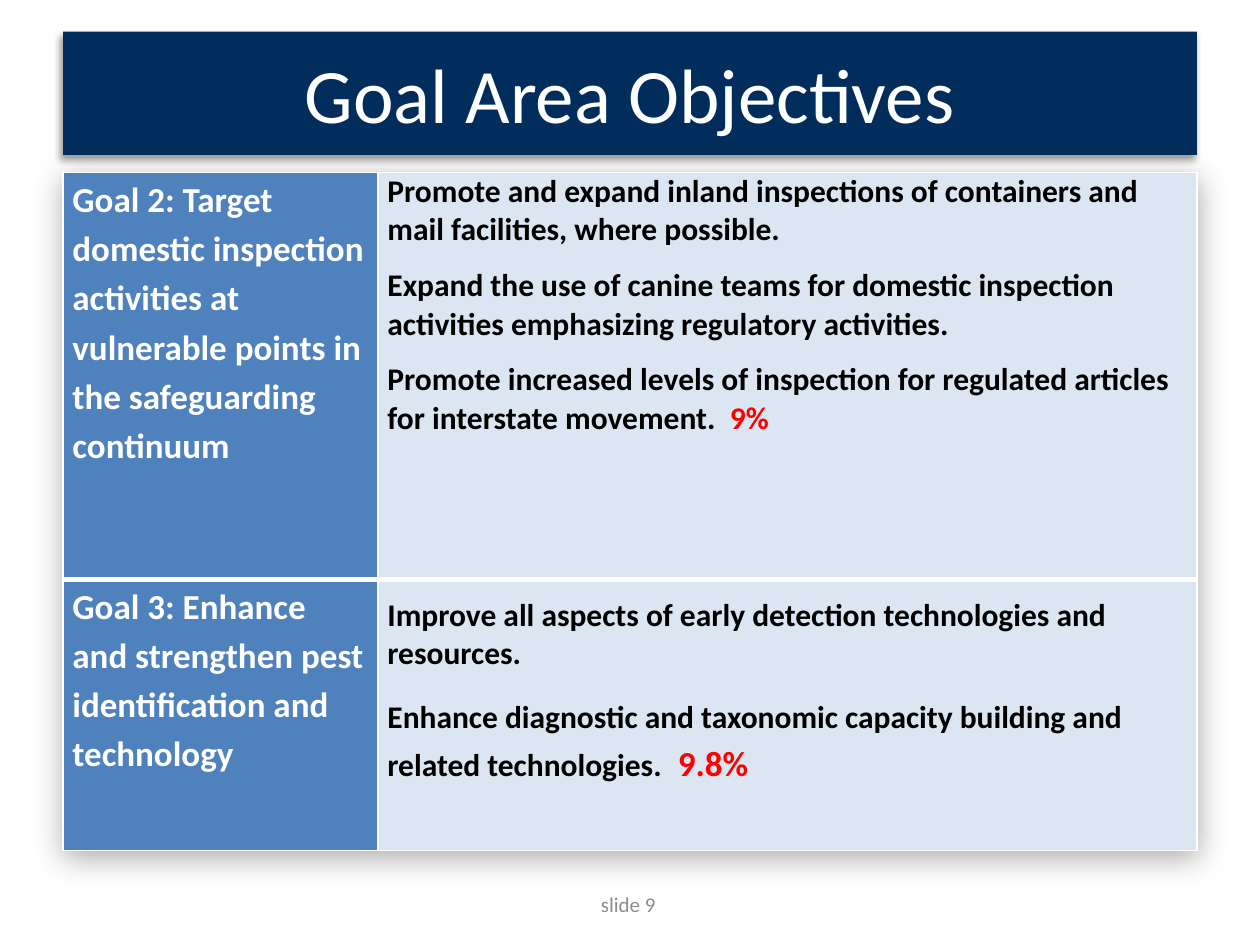
from dataclasses import dataclass

from lxml import etree
from pptx import Presentation
from pptx.dml.color import RGBColor
from pptx.enum.text import MSO_ANCHOR, PP_ALIGN
from pptx.oxml.ns import qn
from pptx.util import Pt

CENTER, MIDDLE, TOP = PP_ALIGN.CENTER, MSO_ANCHOR.MIDDLE, MSO_ANCHOR.TOP
TITLE_ONLY = 5
FONT = "Calibri"
NAVY, BLUE, PALE = "002D5B", "4F81BD", "DCE6F2"
WHITE, BLACK, RED, GRAY = "FFFFFF", "000000", "FF0000", "8C8C8C"
LEFT, WIDTH = 36, 648
COLUMN_WIDTHS = (180, 468)


@dataclass
class Objective:
    text: str
    share: str = ""
    share_size: float = 18
    before: float = 9.8
    spacing: float = 1.0


@dataclass
class Goal:
    text: str
    height: float
    bottom_border: float
    objectives_top: float
    objectives: list[Objective]


GOALS = [
    Goal(
        "Goal 2: Target domestic inspection activities at vulnerable points "
        "in the safeguarding continuum",
        232.5, 3, 0,
        [
            Objective("Promote and expand inland inspections of containers and "
                      "mail facilities, where possible.", before=0),
            Objective("Expand the use of canine teams for domestic inspection "
                      "activities emphasizing regulatory activities."),
            Objective("Promote increased levels of inspection for regulated "
                      "articles for interstate movement.", "9%"),
        ],
    ),
    Goal(
        "Goal 3: Enhance and strengthen pest identification and technology",
        154.8, 1, 9.8,
        [
            Objective("Improve all aspects of early detection technologies "
                      "and resources.", before=0),
            Objective("Enhance diagnostic and taxonomic capacity building and "
                      "related technologies.", "9.8%", 20, 11.2, 1.15),
        ],
    ),
]


def rgb(color: str) -> RGBColor:
    return RGBColor.from_string(color)


def style(font, size: float, color: str, bold: bool = False) -> None:
    font.name = FONT
    font.size = Pt(size)
    font.bold = bold
    font.color.rgb = rgb(color)


def shadow_effect(blur: float, distance: float, angle: int, opacity: int):
    effects = etree.Element(qn("a:effectLst"))
    shadow = etree.SubElement(
        effects, qn("a:outerShdw"), blurRad=str(Pt(blur)), dist=str(Pt(distance)),
        dir=str(angle * 60000), algn="ctr", rotWithShape="0")
    tint = etree.SubElement(shadow, qn("a:srgbClr"), val=BLACK)
    etree.SubElement(tint, qn("a:alpha"), val=str(opacity * 1000))
    return effects


def set_borders(cell, top: float, bottom: float) -> None:
    properties = cell._tc.get_or_add_tcPr()
    widths = {"a:lnL": 1, "a:lnR": 1, "a:lnT": top, "a:lnB": bottom}
    for position, (tag, width) in enumerate(widths.items()):
        line = etree.Element(qn(tag), w=str(Pt(width)))
        fill = etree.SubElement(line, qn("a:solidFill"))
        etree.SubElement(fill, qn("a:srgbClr"), val=WHITE)
        properties.insert(position, line)


def format_cell(cell, fill: str, top_border: float, bottom_border: float,
                margin_top: float = 0) -> None:
    cell.fill.solid()
    cell.fill.fore_color.rgb = rgb(fill)
    cell.margin_left = cell.margin_right = Pt(5.4)
    cell.margin_top, cell.margin_bottom = Pt(margin_top), Pt(0)
    cell.vertical_anchor = TOP
    set_borders(cell, top_border, bottom_border)


def write_objectives(cell, objectives: list[Objective]) -> None:
    frame = cell.text_frame
    for index, objective in enumerate(objectives):
        paragraph = frame.add_paragraph() if index else frame.paragraphs[0]
        paragraph.space_before = Pt(objective.before)
        paragraph.line_spacing = objective.spacing
        statement = paragraph.add_run()
        statement.text = objective.text
        style(statement.font, 18, BLACK, bold=True)
        if objective.share:
            share = paragraph.add_run()
            share.text = "  " + objective.share
            style(share.font, objective.share_size, RED, bold=True)


def add_title(slide) -> None:
    title = slide.shapes.title
    title.left, title.top, title.width, title.height = (
        Pt(LEFT), Pt(18), Pt(WIDTH), Pt(70.5))
    title.fill.solid()
    title.fill.fore_color.rgb = rgb(NAVY)
    title._element.spPr.append(shadow_effect(4, 3, 135, 40))
    title.text_frame.text = "Goal Area Objectives"
    title.text_frame.vertical_anchor = MIDDLE
    heading = title.text_frame.paragraphs[0]
    heading.alignment = CENTER
    style(heading.font, 44, WHITE)


def add_goal_table(slide, goals: list[Goal]) -> None:
    table = slide.shapes.add_table(
        len(goals), len(COLUMN_WIDTHS), Pt(LEFT), Pt(98.6), Pt(WIDTH),
        Pt(sum(goal.height for goal in goals))).table
    table._tbl.tblPr.insert(0, shadow_effect(17.75, 4, 87, 33))
    for column, width in zip(table.columns, COLUMN_WIDTHS):
        column.width = Pt(width)
    top_border = 1
    for index, goal in enumerate(goals):
        table.rows[index].height = Pt(goal.height)
        goal_cell, objectives_cell = table.cell(index, 0), table.cell(index, 1)
        format_cell(goal_cell, BLUE, top_border, goal.bottom_border)
        format_cell(objectives_cell, PALE, top_border, goal.bottom_border,
                    goal.objectives_top)
        goal_cell.text_frame.text = goal.text
        goal_name = goal_cell.text_frame.paragraphs[0]
        goal_name.line_spacing = 1.15
        style(goal_name.font, 20, WHITE, bold=True)
        write_objectives(objectives_cell, goal.objectives)
        top_border = goal.bottom_border


def add_footer(slide) -> None:
    footer = slide.shapes.add_textbox(Pt(275), Pt(502), Pt(168), Pt(28.8))
    footer.text_frame.word_wrap = True
    footer.text_frame.vertical_anchor = MIDDLE
    footer.text_frame.text = "slide 9"
    page = footer.text_frame.paragraphs[0]
    page.alignment = CENTER
    style(page.font, 12, GRAY)


def main() -> None:
    presentation = Presentation()
    presentation.slide_width, presentation.slide_height = Pt(720), Pt(540)
    slide = presentation.slides.add_slide(presentation.slide_layouts[TITLE_ONLY])
    add_footer(slide)
    add_title(slide)
    add_goal_table(slide, GOALS)
    presentation.save("out.pptx")


if __name__ == "__main__":
    main()
